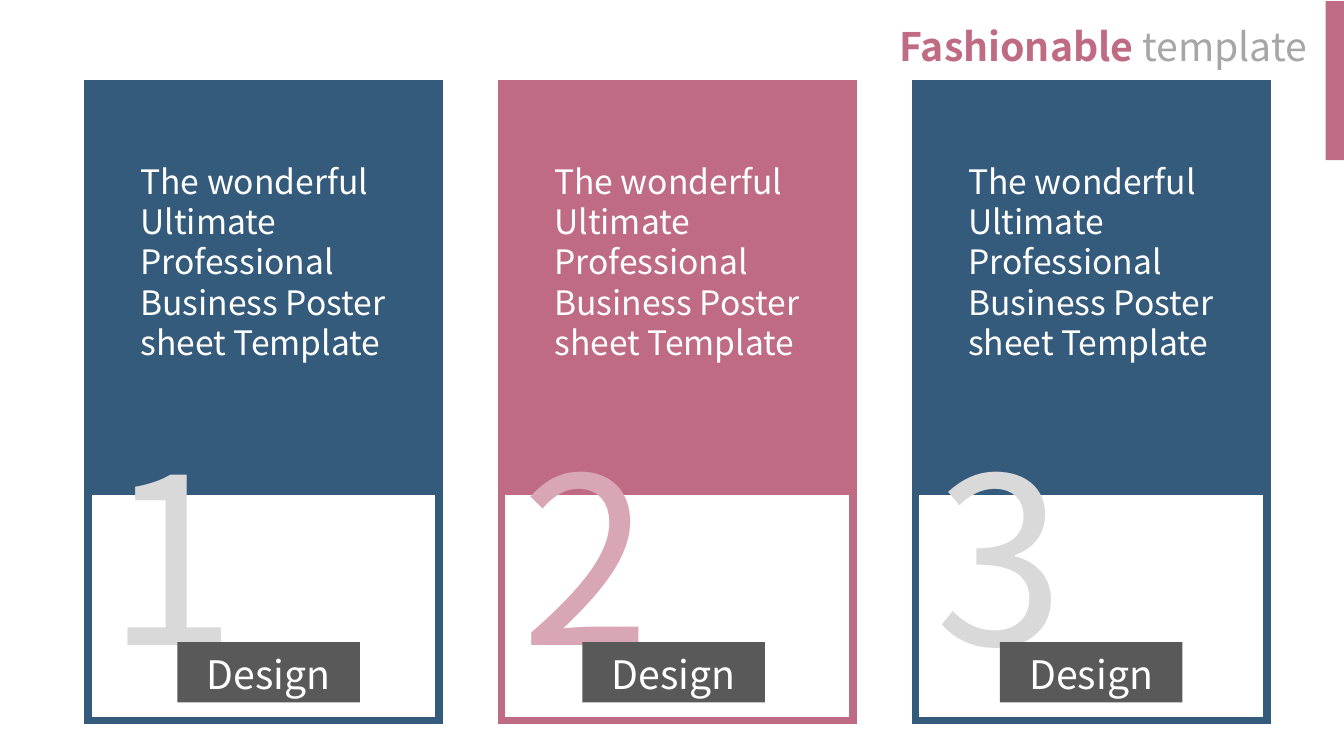
from dataclasses import dataclass

from lxml import etree
from pptx import Presentation
from pptx.dml.color import RGBColor
from pptx.enum.shapes import MSO_SHAPE
from pptx.enum.text import MSO_ANCHOR, PP_ALIGN
from pptx.oxml.ns import qn
from pptx.util import Cm, Pt

RECT = MSO_SHAPE.RECTANGLE
TOP, MIDDLE = MSO_ANCHOR.TOP, MSO_ANCHOR.MIDDLE
LEFT, CENTER, RIGHT = PP_ALIGN.LEFT, PP_ALIGN.CENTER, PP_ALIGN.RIGHT

FONT = "Noto Sans CJK JP"
BLUE, ROSE, WHITE = "345B7C", "C06B84", "FFFFFF"
SILVER, PINK, GREY, CHARCOAL = "D9D9D9", "D9A6B5", "A6A6A6", "595959"
BODY = "The wonderful Ultimate Professional Business Poster sheet Template"
CARD_LEFT, CARD_PITCH, CARD_WIDTH = 2.21, 10.43, 8.86


@dataclass
class Run:
    text: str
    size: float
    color: str
    bold: bool = False


@dataclass
class Card:
    number: str
    color: str
    number_color: str
    badge_left: float


CARDS = [
    Card("1", BLUE, SILVER, 4.47),
    Card("2", ROSE, PINK, 14.68),
    Card("3", BLUE, SILVER, 25.2),
]


def rgb(color: str) -> RGBColor:
    return RGBColor.from_string(color)


def write(sp, runs: list[Run], align=LEFT, anchor=TOP, wrap: bool = True) -> None:
    tf = sp.text_frame
    tf.word_wrap = wrap
    tf.vertical_anchor = anchor
    p = tf.paragraphs[0]
    p.alignment = align
    for run in runs:
        r = p.add_run()
        r.text = run.text
        values = {"name": FONT, "size": Pt(run.size), "bold": run.bold}
        for name, value in values.items():
            setattr(r.font, name, value)
        r.font.color.rgb = rgb(run.color)


def add_rect(s, x: float, y: float, w: float, h: float, fill: str, line: str = ""):
    sp = s.shapes.add_shape(RECT, Cm(x), Cm(y), Cm(w), Cm(h))
    sp.shadow.inherit = False
    sp.fill.solid()
    sp.fill.fore_color.rgb = rgb(fill)
    if line:
        sp.line.color.rgb = rgb(line)
        sp.line.width = Pt(5.5)
        # Square outline corners
        ln = sp.element.spPr.find(qn("a:ln"))
        etree.SubElement(ln, qn("a:miter"), lim="800000")
    else:
        sp.line.fill.background()
    return sp


def add_text(s, x: float, y: float, w: float, h: float, runs: list[Run], **layout):
    sp = s.shapes.add_textbox(Cm(x), Cm(y), Cm(w), Cm(h))
    write(sp, runs, **layout)
    return sp


def add_card(s, card: Card, x: float) -> None:
    # Coloured panel above a framed white panel
    add_rect(s, x, 2.11, CARD_WIDTH, 10.21, card.color, card.color)
    add_rect(s, x, 12.37, CARD_WIDTH, 5.79, WHITE, card.color)
    # Large number, description and badge
    add_text(s, x + 0.25, 10.29, 4.19, 7.34,
             [Run(card.number, 166, card.number_color)], wrap=False)
    add_text(s, x + 1.08, 3.92, 6.71, 6.4, [Run(BODY, 24, WHITE)])
    badge = add_rect(s, card.badge_left, 16.18, 4.6, 1.52, CHARCOAL)
    badge.text_frame.margin_top = Cm(0.2)
    write(badge, [Run("Design", 28, WHITE)], align=CENTER, anchor=MIDDLE)


def main() -> None:
    prs = Presentation()
    prs.slide_width, prs.slide_height = Cm(33.87), Cm(19.05)
    s = prs.slides.add_slide(prs.slide_layouts[6])

    # Three cards
    for i, card in enumerate(CARDS):
        add_card(s, card, CARD_LEFT + i * CARD_PITCH)

    # Corner accent and title
    add_rect(s, 33.41, 0.03, 0.46, 4.01, ROSE)
    add_text(s, 21.48, 0.43, 11.71, 1.45,
             [Run("Fashionable ", 28, ROSE, True), Run("template", 28, GREY)],
             align=RIGHT)

    prs.save("out.pptx")


if __name__ == "__main__":
    main()
